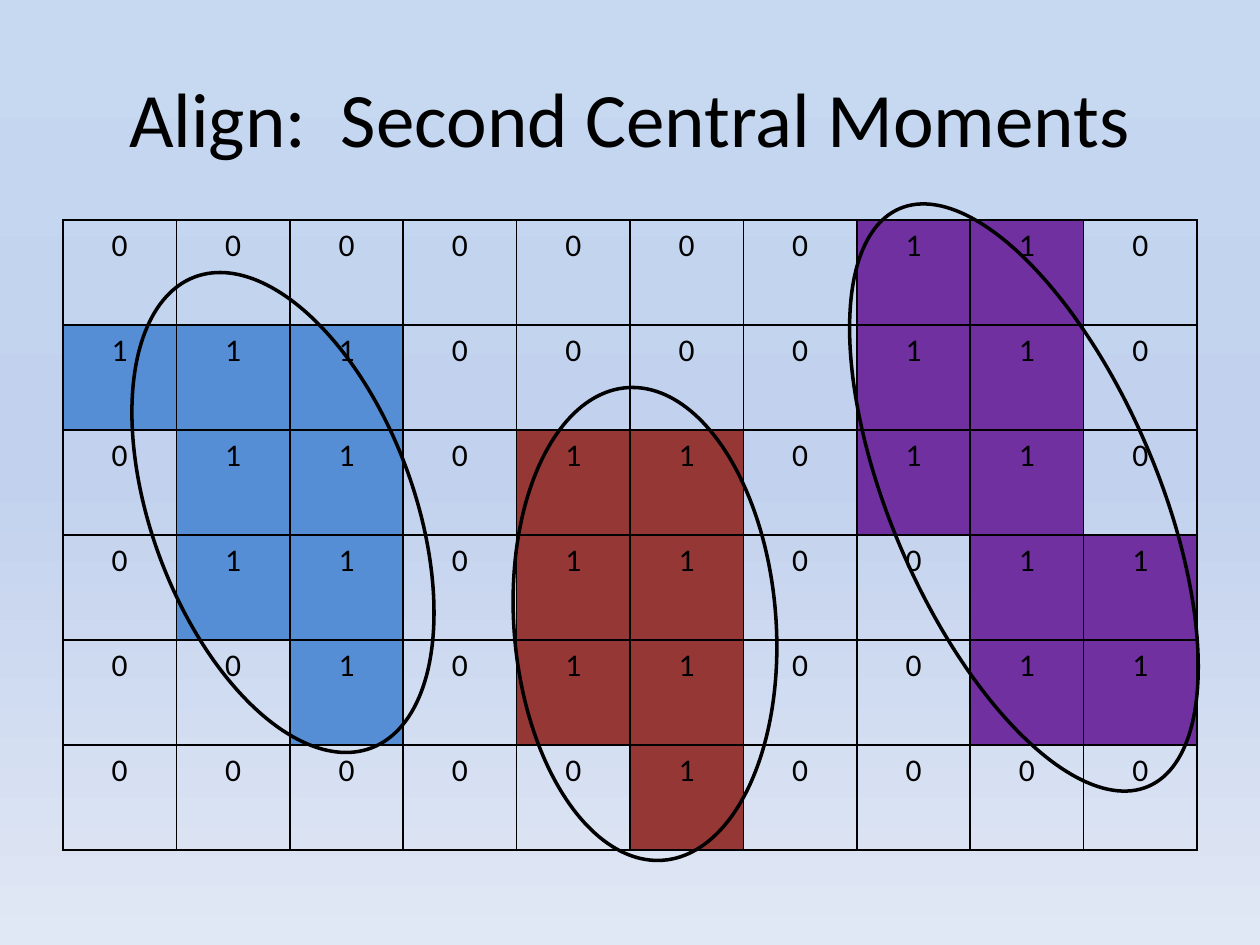
from copy import deepcopy

from lxml.etree import SubElement
from pptx import Presentation
from pptx.dml.color import RGBColor
from pptx.enum.shapes import MSO_SHAPE
from pptx.enum.text import MSO_ANCHOR, PP_ALIGN
from pptx.oxml.ns import qn
from pptx.util import Pt

EMU_PER_PX = 914400 / 126
FONT = "Calibri"

BLACK = RGBColor(0x00, 0x00, 0x00)
BLUE = RGBColor(0x55, 0x8E, 0xD5)
RED = RGBColor(0x95, 0x37, 0x35)
PURPLE = RGBColor(0x70, 0x30, 0xA0)
BACKGROUND_STOPS = [
    (0, RGBColor(0xC6, 0xD9, 0xF1)),
    (0.5, RGBColor(0xC2, 0xD1, 0xED)),
    (1, RGBColor(0xE1, 0xE8, 0xF5)),
]

# Each letter is a pixel of a region (value 1); a dot is background (value 0).
PIXELS = [
    ".......PP.",
    "BBB....PP.",
    ".BB.RR.PP.",
    ".BB.RR..PP",
    "..B.RR..PP",
    ".....R....",
]
REGION_COLORS = {"B": BLUE, "R": RED, "P": PURPLE}

# left, top, width, height, rotation
MOMENT_ELLIPSES = [
    (152, 261, 262, 503, 339.5),
    (514, 387, 262, 474, 355.6),
    (891, 183, 266, 629, 336.7),
]


def px(*lengths):
    return [round(length * EMU_PER_PX) for length in lengths]


def format_text(text_frame, size):
    paragraph = text_frame.paragraphs[0]
    paragraph.alignment = PP_ALIGN.CENTER
    font = paragraph.runs[0].font
    font.name = FONT
    font.size = Pt(size)
    font.color.rgb = BLACK


def set_background(slide):
    fill = slide.background.fill
    fill.gradient()
    fill.gradient_angle = 270
    stop_list = next(slide.element.iter(qn("a:gsLst")))
    stop_list.append(deepcopy(stop_list[0]))
    for stop, (position, color) in zip(fill.gradient_stops, BACKGROUND_STOPS):
        stop.position = position
        stop.color.rgb = color


def set_title(slide, text):
    title = slide.shapes.title
    title.left, title.top, title.width, title.height = px(63, 38, 1134, 158)
    title.text_frame.text = text
    title.text_frame.vertical_anchor = MSO_ANCHOR.MIDDLE
    format_text(title.text_frame, 44)


def set_borders(cell):
    properties = cell._tc.get_or_add_tcPr()
    for side in ("a:lnL", "a:lnR", "a:lnT", "a:lnB"):
        line = SubElement(properties, qn(side), w=str(Pt(1)))
        solid_fill = SubElement(line, qn("a:solidFill"))
        SubElement(solid_fill, qn("a:srgbClr"), val=str(BLACK))


def fill_cell(cell, pixel):
    cell.text_frame.text = "1" if pixel in REGION_COLORS else "0"
    format_text(cell.text_frame, 18)
    set_borders(cell)
    if pixel in REGION_COLORS:
        cell.fill.solid()
        cell.fill.fore_color.rgb = REGION_COLORS[pixel]
    else:
        cell.fill.background()


def add_pixel_table(slide):
    table = slide.shapes.add_table(
        len(PIXELS), len(PIXELS[0]), *px(63, 220, 1134, 630)
    ).table
    table.first_row = False
    table.horz_banding = False
    for row, pixels in enumerate(PIXELS):
        for column, pixel in enumerate(pixels):
            fill_cell(table.cell(row, column), pixel)


def add_ellipse(slide, left, top, width, height, rotation):
    ellipse = slide.shapes.add_shape(
        MSO_SHAPE.OVAL, *px(left, top, width, height)
    )
    ellipse.rotation = rotation
    ellipse.shadow.inherit = False
    ellipse.fill.background()
    ellipse.line.color.rgb = BLACK
    ellipse.line.width = Pt(2)


def main():
    presentation = Presentation()
    presentation.slide_width, presentation.slide_height = px(1260, 945)
    slide = presentation.slides.add_slide(presentation.slide_layouts[5])
    set_background(slide)
    set_title(slide, "Align:  Second Central Moments")
    add_pixel_table(slide)
    for ellipse in MOMENT_ELLIPSES:
        add_ellipse(slide, *ellipse)
    presentation.save("out.pptx")


if __name__ == "__main__":
    main()
